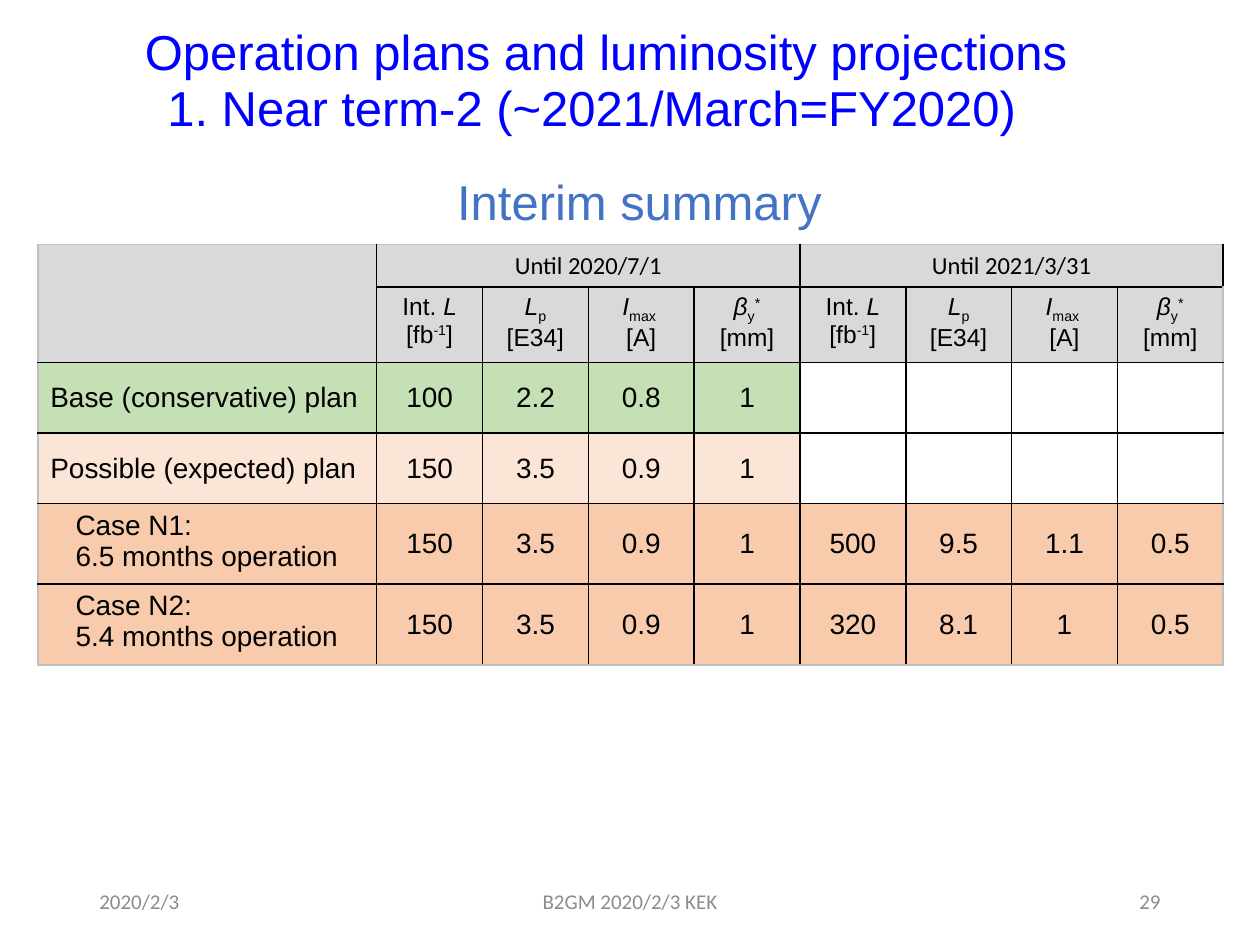
"""Build the near-term operation plan slide with its luminosity table."""
from dataclasses import dataclass

from lxml.etree import SubElement
from pptx import Presentation
from pptx.dml.color import RGBColor
from pptx.enum.text import MSO_ANCHOR, MSO_AUTO_SIZE, PP_ALIGN
from pptx.oxml.ns import qn
from pptx.util import Inches, Pt


@dataclass(frozen=True)
class Theme:
    sans: str = "Arial"
    footer_font: str = "Calibri"
    title_size: int = 28
    body_size: int = 16
    header_size: int = 14
    footer_size: int = 12
    title: str = "0000FF"
    subtitle: str = "4472C4"
    footer: str = "8C8C8C"
    text: str = "000000"
    grid: str = "000000"
    frame: str = "BFBFBF"
    header: str = "D9D9D9"
    base: str = "C5E0B4"
    possible: str = "FBE5D6"
    case: str = "F8CBAD"


@dataclass(frozen=True)
class Span:
    text: str
    italic: bool = False
    baseline: int = 0


@dataclass(frozen=True)
class Label:
    text: str
    left: float
    top: float
    width: float
    height: float
    size: int
    font: str
    color: str
    align: PP_ALIGN = PP_ALIGN.LEFT
    anchor: MSO_ANCHOR = MSO_ANCHOR.TOP


@dataclass(frozen=True)
class Plan:
    lines: tuple[str, ...]
    values: tuple[str, ...]
    fill: str
    indent: float = 0


THEME = Theme()
TITLE = Label("Operation plans and luminosity projections", 1.05, 0.12, 7.65, 0.57,
              THEME.title_size, THEME.sans, THEME.title)
HEADINGS = (
    Label("1. Near term-2 (~2021/March=FY2020)", 1.23, 0.57, 7.27, 0.57,
          THEME.title_size, THEME.sans, THEME.title),
    Label("Interim summary", 3.53, 1.31, 4.78, 0.57,
          THEME.title_size, THEME.sans, THEME.subtitle),
)
FOOTERS = (
    ("2020/2/3", 0.69, 2.25, PP_ALIGN.LEFT),
    ("B2GM 2020/2/3 KEK", 3.31, 3.38, PP_ALIGN.CENTER),
    ("29", 7.06, 2.25, PP_ALIGN.RIGHT),
)
PERIODS = ("Until 2020/7/1", "Until 2021/3/31")
QUANTITIES = (
    ((Span("Int. "), Span("L", True), Span(" [fb"), Span("-1", baseline=30), Span("]")),),
    ((Span("L", True), Span("p", baseline=-25), Span(" [E34]")),),
    ((Span("I", True), Span("max ", baseline=-25)), (Span("[A]"),)),
    ((Span("β", True), Span("y", baseline=-25), Span("*", baseline=30), Span(" [mm]")),),
)
EXPECTED = ("150", "3.5", "0.9", "1")
PLANS = (
    Plan(("Base (conservative) plan",), ("100", "2.2", "0.8", "1"), THEME.base),
    Plan(("Possible (expected) plan",), EXPECTED, THEME.possible),
    Plan(("Case N1:", "6.5 months operation"),
         EXPECTED + ("500", "9.5", "1.1", "0.5"), THEME.case, 0.2),
    Plan(("Case N2:", "5.4 months operation"),
         EXPECTED + ("320", "8.1", "1", "0.5"), THEME.case, 0.2),
)
ROW_HEIGHTS = (0.33, 0.6, 0.56, 0.56, 0.64, 0.64)
COLUMN_WIDTHS = (2.69,) + (0.84,) * (len(PERIODS) * len(QUANTITIES))


def set_font(font, size: int, name: str, color: str) -> None:
    """Apply size, family and colour to a font."""
    font.size = Pt(size)
    font.name = name
    font.color.rgb = RGBColor.from_string(color)


def place_label(box, label: Label) -> None:
    """Position a text shape and fill it from its label."""
    box.left, box.top = Inches(label.left), Inches(label.top)
    box.width, box.height = Inches(label.width), Inches(label.height)
    frame = box.text_frame
    frame.word_wrap = True
    frame.auto_size = MSO_AUTO_SIZE.NONE
    frame.vertical_anchor = label.anchor
    frame.text = label.text
    para = frame.paragraphs[0]
    para.alignment = label.align
    set_font(para.font, label.size, label.font, label.color)


def add_label(page, label: Label) -> None:
    """Add a text box for a label."""
    place_label(page.shapes.add_textbox(0, 0, 0, 0), label)


def write_cell(cell, lines: tuple[tuple[Span, ...], ...], size: int,
               font: str = THEME.sans, align: PP_ALIGN = PP_ALIGN.CENTER,
               anchor: MSO_ANCHOR = MSO_ANCHOR.MIDDLE, indent: float = 0) -> None:
    """Write lines of spans into a table cell."""
    cell.vertical_anchor = anchor
    frame = cell.text_frame
    for number, spans in enumerate(lines):
        para = frame.add_paragraph() if number else frame.paragraphs[0]
        para.alignment = align
        if indent:
            para._p.get_or_add_pPr().set("marL", str(Inches(indent)))
        set_font(para.font, size, font, THEME.text)
        for span in spans:
            run = para.add_run()
            run.text = span.text
            if span.italic:
                run.font.italic = True
            if span.baseline:
                run.font._element.set("baseline", f"{span.baseline * 1000}")


def border_cell(cell, row: int, column: int) -> None:
    """Draw black inner borders and a grey outer frame around a cell."""
    outer = {
        "a:lnL": column == 0,
        "a:lnR": column == len(COLUMN_WIDTHS) - 1,
        "a:lnT": row == 0,
        "a:lnB": row == len(ROW_HEIGHTS) - 1,
    }
    properties = cell._tc.get_or_add_tcPr()
    for tag, is_outer in outer.items():
        line = SubElement(properties, qn(tag), w=str(Pt(1)))
        fill = SubElement(line, qn("a:solidFill"))
        SubElement(fill, qn("a:srgbClr"), val=THEME.frame if is_outer else THEME.grid)


def add_plan_table(page) -> None:
    """Add the table of plans by period and quantity."""
    table = page.shapes.add_table(
        len(ROW_HEIGHTS), len(COLUMN_WIDTHS), Inches(0.3), Inches(1.94),
        Inches(sum(COLUMN_WIDTHS)), Inches(sum(ROW_HEIGHTS))).table
    table.first_row = table.horz_banding = False
    for column, width in zip(table.columns, COLUMN_WIDTHS):
        column.width = Inches(width)
    for row, height in zip(table.rows, ROW_HEIGHTS):
        row.height = Inches(height)
    for row in range(len(ROW_HEIGHTS)):
        for column in range(len(COLUMN_WIDTHS)):
            cell = table.cell(row, column)
            border_cell(cell, row, column)
            if row < 2 or column <= len(PLANS[row - 2].values):
                cell.fill.solid()
                color = THEME.header if row < 2 else PLANS[row - 2].fill
                cell.fill.fore_color.rgb = RGBColor.from_string(color)
            else:
                cell.fill.background()
    table.cell(0, 0).merge(table.cell(1, 0))
    for number, period in enumerate(PERIODS):
        first = 1 + number * len(QUANTITIES)
        cell = table.cell(0, first)
        cell.merge(table.cell(0, first + len(QUANTITIES) - 1))
        write_cell(cell, ((Span(period),),), THEME.header_size, THEME.footer_font,
                   anchor=MSO_ANCHOR.TOP)
        for offset, lines in enumerate(QUANTITIES):
            write_cell(table.cell(1, first + offset), lines, THEME.header_size,
                       anchor=MSO_ANCHOR.TOP)
    for row, plan in enumerate(PLANS, start=2):
        write_cell(table.cell(row, 0), tuple((Span(line),) for line in plan.lines),
                   THEME.body_size, align=PP_ALIGN.LEFT, indent=plan.indent,
                   anchor=MSO_ANCHOR.TOP if plan.indent else MSO_ANCHOR.MIDDLE)
        for column, value in enumerate(plan.values, start=1):
            write_cell(table.cell(row, column), ((Span(value),),), THEME.body_size)


def main() -> None:
    """Build and save the deck."""
    deck = Presentation()
    deck.slide_width, deck.slide_height = Inches(10), Inches(7.5)
    page = deck.slides.add_slide(deck.slide_layouts[5])
    place_label(page.shapes.title, TITLE)
    for heading in HEADINGS:
        add_label(page, heading)
    for text, left, width, align in FOOTERS:
        add_label(page, Label(text, left, 6.95, width, 0.4, THEME.footer_size,
                              THEME.footer_font, THEME.footer, align, MSO_ANCHOR.MIDDLE))
    add_plan_table(page)
    deck.save("out.pptx")


if __name__ == "__main__":
    main()
